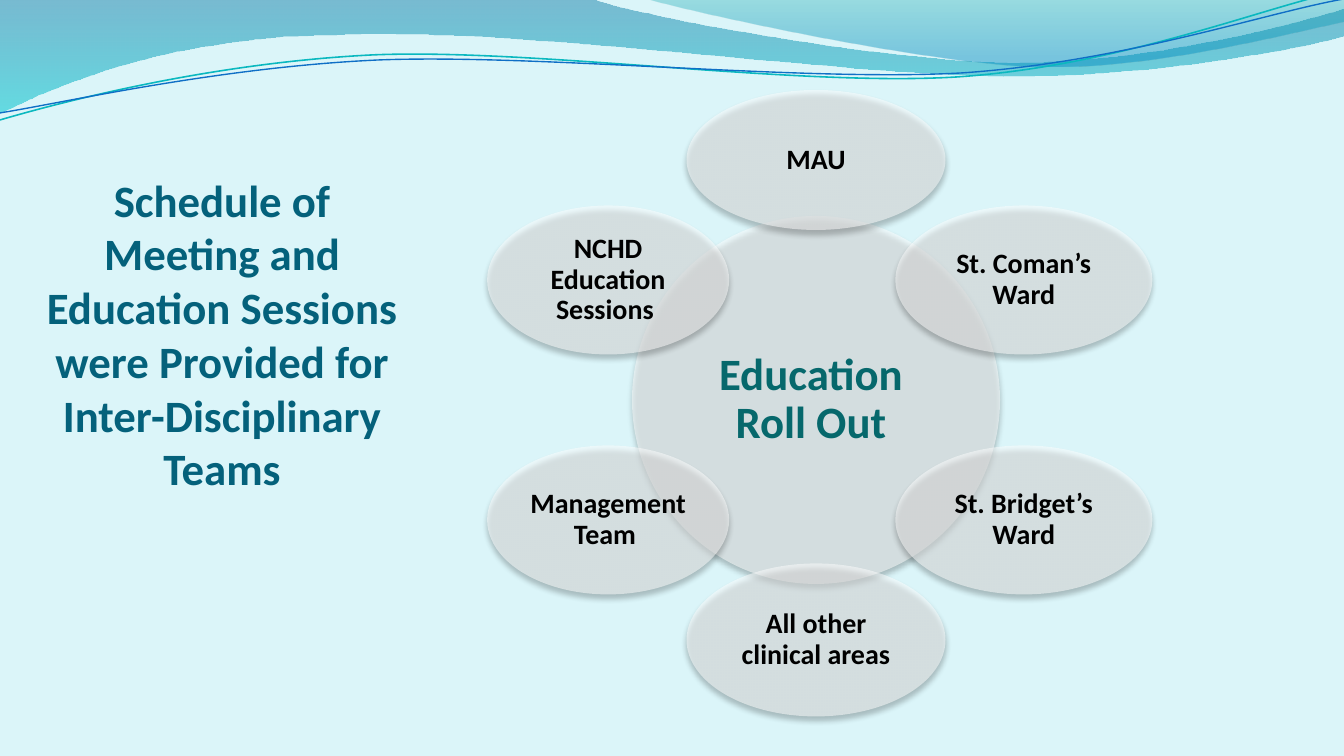
import math
import pptx
import pptx.util
import pptx.dml.color
import pptx.enum.shapes
import pptx.enum.text
from lxml import etree

TITLE = ("Schedule of Meeting and Education Sessions were Provided for "
         "Inter-Disciplinary Teams")
HUB = "Education Roll Out"
# Petals clockwise from the top: text, width, height
PETALS = [
    ("MAU", 259, 140),
    ("St. Coman’s Ward", 257, 149),
    ("St. Bridget’s Ward", 257, 149),
    ("All other clinical areas", 259, 153),
    ("Management Team ", 242, 149),
    ("NCHD Education Sessions ", 242, 149),
]
MID, RING, CORE = (816, 400), 240, 368

COLORS = {"back": "DBF5F9", "title": "04617B", "hub": "06686C",
          "text": "000000", "white": "FFFFFF"}

# Outlines: a start point, then lines (one point) and curves (three points)
BANDS = [
    ((0, 0), [
        [(591, -1)],
        [(640, 17), (892, 63), (1019, 63)],
        [(1146, 63), (1288, 26), (1344, 9)],
        [(1345, 36)],
        [(1321, 44), (1169, 77), (1003, 77)],
        [(836, 75), (513, 28), (345, 35)],
        [(173, 36), (62, 83), (-1, 114)],
    ], [(0, "0074A1", 45), (1, "00C6CF", 55)]),
    ((644, -1), [
        [(684, 11), (917, 62), (1034, 66)],
        [(1150, 70), (1292, 32), (1344, 22)],
        [(1344, 0)],
    ], [(0, "00A1A9", 30), (0.8, "008BBF", 45)]),
]
WAVES = [
    ((0, 120), [
        [(65, 101), (212, 63), (372, 55)],
        [(532, 48), (796, 87), (957, 77)],
        [(1120, 66), (1262, 8), (1341, -9)],
    ], "0AB8BF", 0.85),
    ((0, 113), [
        [(63, 103), (220, 67), (380, 60)],
        [(542, 54), (802, 82), (962, 73)],
        [(1124, 62), (1265, 13), (1344, -1)],
    ], "0F6FC6", 0.75),
]

SCALE = 914400 / 134.4
NS = "http://schemas.openxmlformats.org/drawingml/2006/main"


def px(n):
    return pptx.util.Emu(round(n * SCALE))


def rgb(code):
    return pptx.dml.color.RGBColor.from_string(code)


def sub(node, tag, **attrs):
    return etree.SubElement(node, f"{{{NS}}}{tag}", **attrs)


def fade(node, share):
    """Set the opacity, in percent, of the colour inside node."""
    tint = node.find(f".//{{{NS}}}srgbClr")
    sub(tint, "alpha", val=str(share * 1000))


def draw(start, parts, close):
    pen = slide.shapes.build_freeform(*start, scale=SCALE)
    pen.add_line_segments([p for part in parts for p in part], close=close)
    shape = pen.convert_to_shape()
    shape.shadow.inherit = False
    # Join each three line steps of a curve into one Bezier step
    steps = iter(shape._element.findall(f".//{{{NS}}}lnTo"))
    for part in parts:
        group = [next(steps) for _ in part]
        if len(group) == 3:
            curve = etree.Element(f"{{{NS}}}cubicBezTo")
            group[0].addprevious(curve)
            for step in group:
                curve.append(step[0])
                step.getparent().remove(step)
    return shape


def write(x, y, w, h, text, size, color, inset, anchor):
    """Add a text box centred on x, y."""
    box = slide.shapes.add_textbox(px(x - w / 2), px(y - h / 2), px(w), px(h))
    frame = box.text_frame
    frame.word_wrap = True
    frame.vertical_anchor = anchor
    (frame.margin_left, frame.margin_top,
     frame.margin_right, frame.margin_bottom) = map(px, inset)
    para = frame.paragraphs[0]
    para.text = text
    para.alignment = pptx.enum.text.PP_ALIGN.CENTER
    font = para.font
    font.name, font.size, font.bold = "Calibri", pptx.util.Pt(size), True
    font.color.rgb = rgb(COLORS[color])
    return para


def bubble(x, y, w, h, text, size, color, inset, shift=0):
    oval = slide.shapes.add_shape(
        pptx.enum.shapes.MSO_SHAPE.OVAL,
        px(x - w / 2), px(y - h / 2), px(w), px(h))
    oval.fill.solid()
    oval.fill.fore_color.rgb = rgb(COLORS["white"])
    oval.line.fill.background()
    props = oval._element.spPr
    fade(props, 50)
    oval.shadow.inherit = False
    cast = sub(props.find(f"{{{NS}}}effectLst"), "outerShdw", blurRad="38100",
               dist="30480", dir="5400000", algn="ctr", rotWithShape="0")
    sub(cast, "srgbClr", val="000000")
    fade(cast, 45)
    # The text fills the rectangle inside the oval
    side = math.sqrt(0.5)
    para = write(x + shift, y, w * side, h * side, text, size, color,
                 [inset] * 4, pptx.enum.text.MSO_ANCHOR.MIDDLE)
    para.line_spacing = 0.9


deck = pptx.Presentation()
deck.slide_width, deck.slide_height = px(1344), px(756)
slide = deck.slides.add_slide(deck.slide_layouts[6])
slide.background.fill.solid()
slide.background.fill.fore_color.rgb = rgb(COLORS["back"])

# Top bands
for start, parts, stops in BANDS:
    band = draw(start, parts, True)
    band.line.fill.background()
    band.fill.gradient()
    band.fill.gradient_angle = 270
    for stop, (place, code, share) in zip(band.fill.gradient_stops, stops):
        stop.position = place
        stop.color.rgb = rgb(code)
        fade(stop._gs, share)

# Thin waves
for start, parts, code, width in WAVES:
    wave = draw(start, parts, False)
    wave.fill.background()
    wave.line.color.rgb = rgb(code)
    wave.line.width = pptx.util.Pt(width)

# Title
write(222, 315, 370, 360, TITLE, 24, "title", (0, 7, 0, 0),
      pptx.enum.text.MSO_ANCHOR.BOTTOM)

# Hub and its ring of petals
bubble(*MID, CORE, CORE, HUB, 24, "hub", 4, shift=-5)
for i, (text, w, h) in enumerate(PETALS):
    turn = math.tau * i / len(PETALS)
    bubble(MID[0] + RING * math.sin(turn), MID[1] - RING * math.cos(turn),
           w, h, text, 15, "text", 3)

deck.save("out.pptx")
